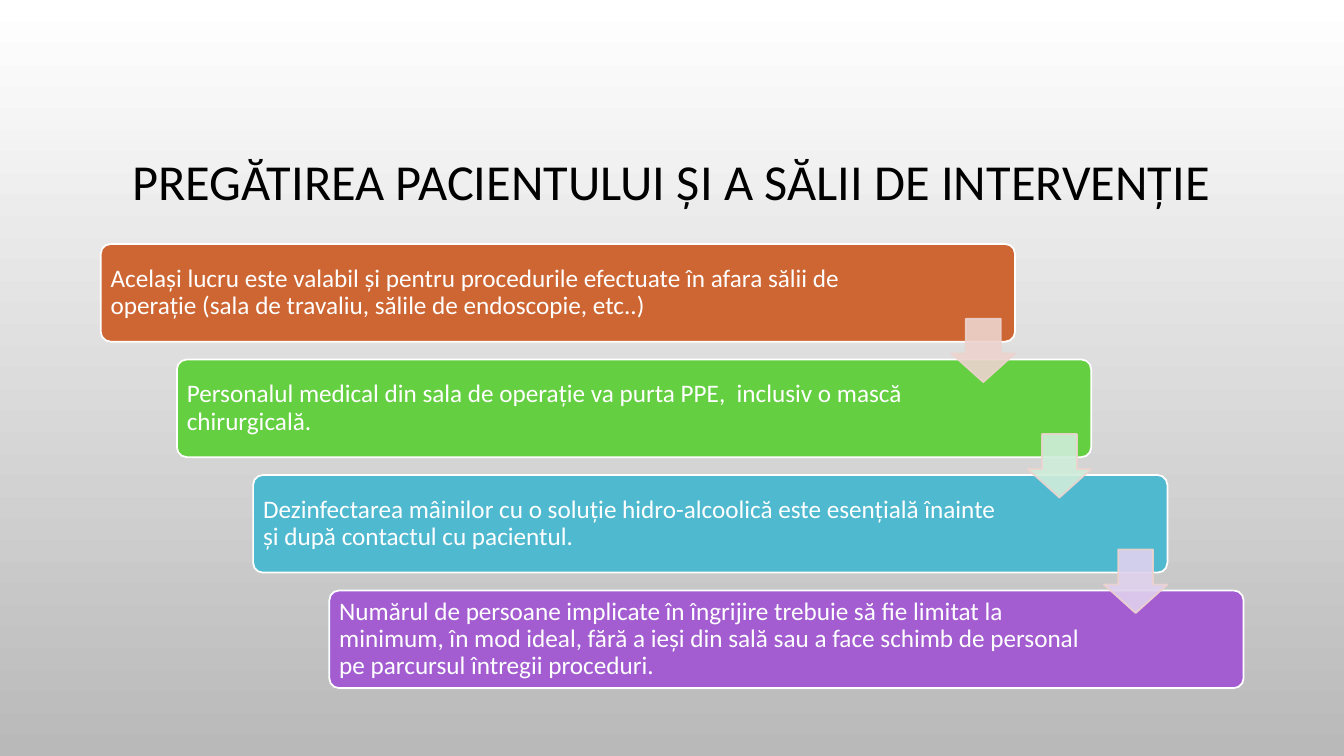
from lxml import etree
from pptx import Presentation
from pptx.dml.color import RGBColor
from pptx.enum.shapes import MSO_SHAPE as SHAPE
from pptx.enum.text import MSO_ANCHOR as ANCHOR, PP_ALIGN as ALIGN
from pptx.oxml.ns import qn
from pptx.util import Cm, Pt

COLORS = {
    "title": "000000", "white": "FFFFFF", "shade": "B9B9B9",
    "orange": "CE6633", "green": "64CF41", "blue": "4FB9D0", "purple": "A35DD1",
    "rose": "EDD3CE", "mint": "D0EDDA", "lilac": "E0D2EE",
}
# text, text width in cm, box colour, colour of the arrow to the next step
STEPS = [
    ("Același lucru este valabil și pentru procedurile efectuate în afara sălii de "
     "operație (sala de travaliu, sălile de endoscopie, etc..)", 20.17, "orange", "rose"),
    ("Personalul medical din sala de operație va purta PPE,  inclusiv o mască "
     "chirurgicală.", 19.36, "green", "mint"),
    ("Dezinfectarea mâinilor cu o soluție hidro-alcoolică este esențială înainte și "
     "după contactul cu pacientul.", 19.36, "blue", "lilac"),
    ("Numărul de persoane implicate în îngrijire trebuie să fie limitat la minimum, "
     "în mod ideal, fără a ieși din sală sau a face schimb de personal pe parcursul "
     "întregii proceduri.", 19.36, "purple", None),
]
LEFT, TOP, DX, DY = 2.54, 6.15, 1.92, 2.91
BOX_W, BOX_H, ARROW = 23.04, 2.46, 1.6
INSET = 0.07


def rgb(name):
    return RGBColor.from_string(COLORS[name])


class SlideBuilder:
    font = "Calibri"
    line_width = Pt(1.25)

    def __init__(self, slide):
        self.s = slide

    def background(self, top, bottom):
        fill = self.s.background.fill
        fill.gradient()
        fill.gradient_angle = 270
        for stop, name, position in zip(fill.gradient_stops, (top, bottom), (0, 1)):
            stop.color.rgb = rgb(name)
            stop.position = position

    def text(self, text, x, y, w, h, size, color, align, margins):
        """Add middle-anchored text; margins are left, top, right, bottom in cm."""
        tf = self.s.shapes.add_textbox(Cm(x), Cm(y), Cm(w), Cm(h)).text_frame
        tf.word_wrap = True
        tf.vertical_anchor = ANCHOR.MIDDLE
        tf.margin_left, tf.margin_top, tf.margin_right, tf.margin_bottom = map(Cm, margins)
        p = tf.paragraphs[0]
        p.text = text
        p.alignment = align
        p.line_spacing = 0.9
        p.font.name = self.font
        p.font.size = Pt(size)
        p.font.color.rgb = rgb(color)

    def shape(self, kind, x, y, w, h, fill, line, adjustments, opacity=100):
        sp = self.s.shapes.add_shape(kind, Cm(x), Cm(y), Cm(w), Cm(h))
        sp.shadow.inherit = False
        sp.fill.solid()
        sp.fill.fore_color.rgb = rgb(fill)
        sp.line.color.rgb = rgb(line)
        sp.line.width = self.line_width
        for i, value in enumerate(adjustments):
            sp.adjustments[i] = value
        if opacity < 100:
            for clr in sp._element.spPr.iter(qn("a:srgbClr")):
                etree.SubElement(clr, qn("a:alpha"), val=str(opacity * 1000))

    def step_box(self, i, text, text_w, color):
        x, y = LEFT + i * DX, TOP + i * DY
        self.shape(SHAPE.ROUNDED_RECTANGLE, x, y, BOX_W, BOX_H, color, "white", [0.1])
        self.text(text, x + INSET, y + INSET, text_w, BOX_H - 2 * INSET,
                  18, "white", ALIGN.LEFT, [0.18] * 4)

    def step_arrow(self, i, color):
        x = LEFT + i * DX + BOX_W - ARROW
        y = TOP + i * DY + 1.88
        self.shape(SHAPE.DOWN_ARROW, x, y, ARROW, ARROW, color, "rose", [0.55, 0.45], 90)


def main():
    prs = Presentation()
    prs.slide_width, prs.slide_height = Cm(33.87), Cm(19.05)
    slide = SlideBuilder(prs.slides.add_slide(prs.slide_layouts[6]))
    slide.background("white", "shade")
    slide.text("PREGĂTIREA PACIENTULUI ȘI A SĂLII DE INTERVENȚIE", 2.54, 1.73, 28.78, 4.42,
               36, "title", ALIGN.CENTER, [0.25, 1.52, 0.25, 0.13])
    for i, (text, text_w, color, _) in enumerate(STEPS):
        slide.step_box(i, text, text_w, color)
    for i, (*_, arrow_color) in enumerate(STEPS[:-1]):
        slide.step_arrow(i, arrow_color)
    prs.save("out.pptx")


if __name__ == "__main__":
    main()
